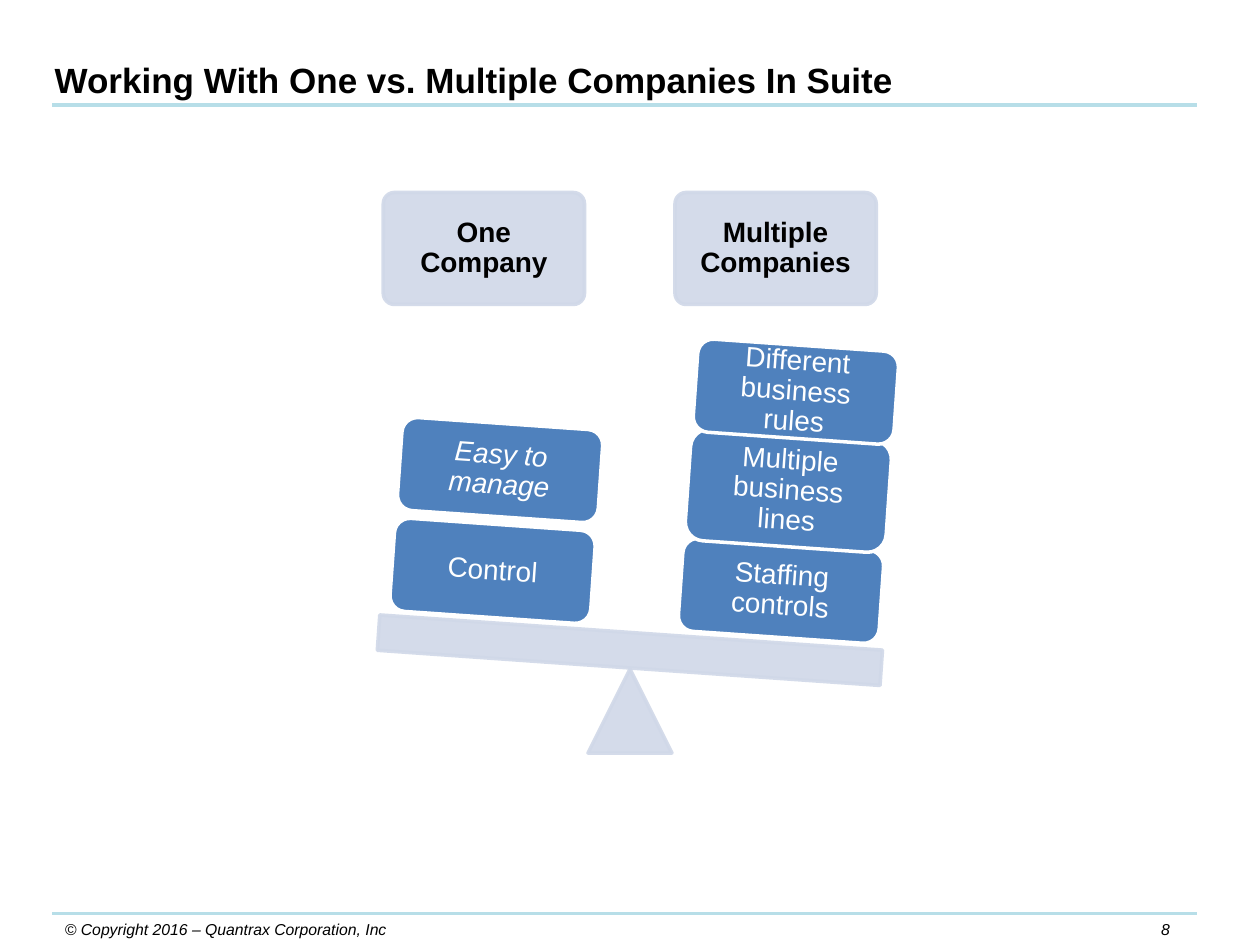
from dataclasses import dataclass

import pptx
import pptx.dml.color
import pptx.enum.shapes
import pptx.enum.text
import pptx.oxml
import pptx.oxml.ns
import pptx.util
from lxml import etree

Pt = pptx.util.Pt
SHAPE = pptx.enum.shapes.MSO_SHAPE
ALIGN = pptx.enum.text.PP_ALIGN
ANCHOR = pptx.enum.text.MSO_ANCHOR
qn = pptx.oxml.ns.qn

COLORS = {"rule": "B7DEE8", "pale": "D0D8E8", "block": "4F81BD",
          "white": "FFFFFF", "black": "000000"}
TILT = 4
BLOCK_W, BLOCK_H = 115, 53.3


@dataclass
class Part:
    """One piece of the balance, in points; pale pieces are translucent."""
    kind: SHAPE
    left: float
    top: float
    width: float
    height: float
    text: str = ""
    pale: bool = True
    tilt: float = 0
    corner: float | None = None
    italic: bool = False


def rgb(name: str) -> pptx.dml.color.RGBColor:
    return pptx.dml.color.RGBColor.from_string(COLORS[name])


def style_text(tf, size: float, color: str = "black", bold: bool = False,
               italic: bool = False, align=ALIGN.LEFT) -> None:
    for p in tf.paragraphs:
        p.alignment = align
        for r in p.runs:
            f = r.font
            f.name, f.size, f.bold, f.italic = "Arial", Pt(size), bold, italic
            f.color.rgb = rgb(color)


def set_alpha(s, percent: int) -> None:
    for color in s._element.spPr.iter(qn("a:srgbClr")):
        etree.SubElement(color, qn("a:alpha")).set("val", str(percent * 1000))


def add_part(slide, part: Part) -> None:
    s = slide.shapes.add_shape(part.kind, Pt(part.left), Pt(part.top),
                               Pt(part.width), Pt(part.height))
    s.shadow.inherit = False
    s.rotation = part.tilt
    if part.corner is not None:
        s.adjustments[0] = part.corner
    s.fill.solid()
    s.fill.fore_color.rgb = rgb("pale" if part.pale else "block")
    s.line.color.rgb = rgb("pale" if part.pale else "white")
    s.line.width = Pt(2)
    if part.pale:
        set_alpha(s, 90)
    if part.text:
        tf = s.text_frame
        tf.text = part.text
        tf.word_wrap = True
        tf.vertical_anchor = ANCHOR.MIDDLE
        tf.margin_left = tf.margin_right = tf.margin_top = tf.margin_bottom = Pt(5)
        tf.paragraphs[0].line_spacing = 0.9
        style_text(tf, 16, "black" if part.pale else "white",
                   bold=part.pale, italic=part.italic, align=ALIGN.CENTER)


def add_rule(slide, y: float) -> None:
    line = slide.shapes.add_connector(pptx.enum.shapes.MSO_CONNECTOR.STRAIGHT,
                                      Pt(30), Pt(y), Pt(684), Pt(y))
    line.line.color.rgb = rgb("rule")
    line.line.width = Pt(2.25)
    etree.SubElement(line._element.spPr, qn("a:effectLst"))


def add_footer(slide, text: str, left: float, width: float, align) -> None:
    tf = slide.shapes.add_textbox(Pt(left), Pt(522), Pt(width), Pt(18)).text_frame
    tf.word_wrap = True
    tf.text = text
    style_text(tf, 9, italic=True, align=align)


def head(left: float, text: str) -> Part:
    return Part(SHAPE.ROUNDED_RECTANGLE, left, 110, BLOCK_W, 64, text, corner=0.1)


def block(left: float, top: float, text: str, height: float = BLOCK_H,
          italic: bool = False) -> Part:
    return Part(SHAPE.ROUNDED_RECTANGLE, left, top, BLOCK_W, height, text,
                pale=False, tilt=TILT, italic=italic)


PARTS = [
    head(219, "One Company"),
    head(385.7, "Multiple Companies"),
    # Fulcrum and plank
    Part(SHAPE.ISOSCELES_TRIANGLE, 336, 382.3, 48, 48),
    Part(SHAPE.RECTANGLE, 216, 361.4, 288, 20.3, tilt=TILT),
    # Right stack, bottom up
    block(388.8, 311, "Staffing controls"),
    block(393, 248.4, "Multiple business lines", height=64),
    block(397.3, 197.2, "Different business rules"),
    # Left stack, bottom up
    block(224, 299.6, "Control"),
    block(228.3, 242, "Easy to manage", italic=True),
]


def main() -> None:
    prs = pptx.Presentation()
    prs.slide_width, prs.slide_height = Pt(720), Pt(540)
    slide = prs.slides.add_slide(prs.slide_layouts[5])

    # Title
    title = slide.shapes.title
    title.left, title.top, title.width, title.height = Pt(24), Pt(30), Pt(528), Pt(31.5)
    tf = title.text_frame
    tf.text = "Working With One vs. Multiple Companies In Suite"
    tf.word_wrap = True
    tf.auto_size = pptx.enum.text.MSO_AUTO_SIZE.NONE
    tf.vertical_anchor = ANCHOR.TOP
    style_text(tf, 20, bold=True)

    # Rules and footer
    for y in (60, 522):
        add_rule(slide, y)
    add_footer(slide, "8", 648, 36, ALIGN.CENTER)
    add_footer(slide, "© Copyright 2016 – Quantrax Corporation, Inc", 30, 234, ALIGN.LEFT)

    # Balance
    for part in PARTS:
        add_part(slide, part)

    prs.save("out.pptx")


if __name__ == "__main__":
    main()
